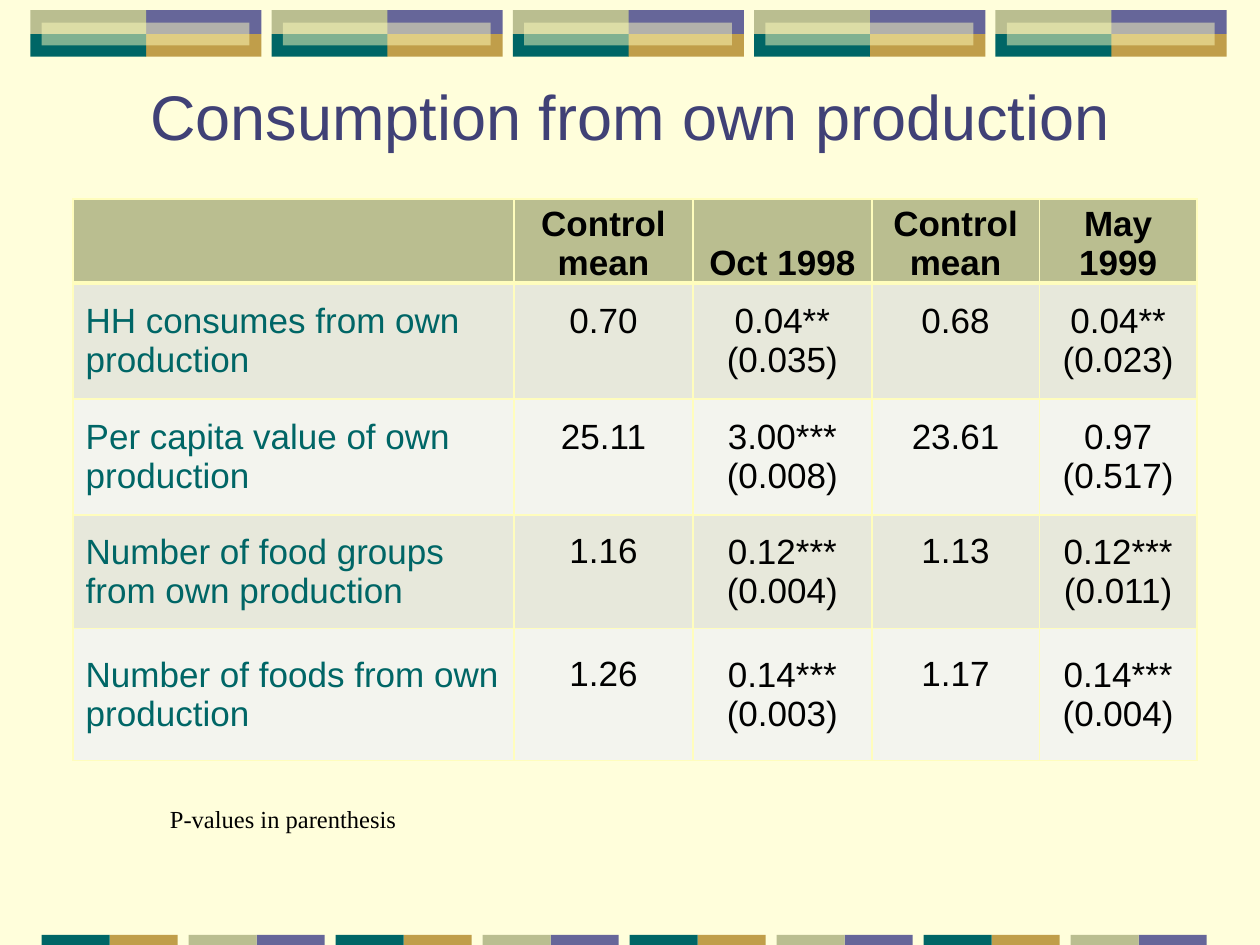
from lxml.etree import SubElement
from pptx import Presentation
from pptx.dml.color import RGBColor
from pptx.enum.shapes import MSO_SHAPE
from pptx.enum.text import MSO_ANCHOR, PP_ALIGN
from pptx.oxml.ns import qn
from pptx.util import Inches, Pt

# Content
TITLE = "Consumption from own production"
NOTE = "P-values in parenthesis"
HEADER = ["", "Control mean", "Oct 1998", "Control mean", "May 1999"]
ROWS = [
    ["HH consumes from own production", "0.70", "0.04**\n(0.035)", "0.68", "0.04**\n(0.023)"],
    ["Per capita value of own production", "25.11", "3.00***\n(0.008)", "23.61", "0.97\n(0.517)"],
    ["Number of food groups from own production", "1.16", "0.12***\n(0.004)", "1.13", "0.12***\n(0.011)"],
    ["Number of foods from own production", "1.26", "0.14***\n(0.003)", "1.17", "0.14***\n(0.004)"],
]
COLUMN_WIDTHS = [3.5, 1.42, 1.42, 1.33, 1.25]
ROW_HEIGHTS = [0.65, 0.92, 0.92, 0.9, 1.05]

CREAM, PALE = "FFFEDB", "FFFDBD"
PURPLE, GOLD, TEAL, OLIVE = "666699", "C09E4A", "006666", "BABE90"
BLACK, NAVY = "000000", "404176"
BANDS = ["E7E8DB", "F3F4EE"]
LINE_HEIGHT = 0.32  # one line of 20 pt text


def color(value):
    return RGBColor.from_string(value)


def add_block(group, left, top, width, height, fill, opacity=None):
    block = group.shapes.add_shape(
        MSO_SHAPE.RECTANGLE, Inches(left), Inches(top), Inches(width), Inches(height))
    block.shadow.inherit = False
    block.fill.solid()
    block.fill.fore_color.rgb = color(fill)
    block.line.fill.background()
    if opacity:
        tint = block.fill._xPr.find(".//" + qn("a:srgbClr"))
        SubElement(tint, qn("a:alpha"), val=str(opacity * 1000))


def write(frame, text, size, fill, font="Arial", bold=False, align=PP_ALIGN.LEFT):
    frame.word_wrap = True
    for index, line in enumerate(text.split("\n")):
        para = frame.add_paragraph() if index else frame.paragraphs[0]
        para.alignment = align
        span = para.add_run()
        span.text = line
        span.font.name = font
        span.font.size = Pt(size)
        span.font.bold = bold
        span.font.color.rgb = color(fill)


def add_text(left, top, width, height, text, size, fill, **style):
    box = page.shapes.add_textbox(Inches(left), Inches(top), Inches(width), Inches(height))
    write(box.text_frame, text, size, fill, **style)
    return box


def set_borders(cell, top, bottom):
    properties = cell._tc.get_or_add_tcPr()
    for side, points in [("L", 1), ("R", 1), ("T", top), ("B", bottom)]:
        line = SubElement(properties, qn("a:ln" + side), w=str(Pt(points)))
        SubElement(SubElement(line, qn("a:solidFill")), qn("a:srgbClr"), val=PALE)


deck = Presentation()
deck.slide_width, deck.slide_height = Inches(10), Inches(7.5)
page = deck.slides.add_slide(deck.slide_layouts[6])
page.background.fill.solid()
page.background.fill.fore_color.rgb = color(CREAM)

# Top banners: four quarters under a translucent bar
banners = page.shapes.add_group_shape()
for number in range(5):
    left = 0.24 + number * 7.66 / 4
    middle = left + 0.915
    add_block(banners, middle, 0.08, 0.92, 0.19, PURPLE)
    add_block(banners, middle, 0.27, 0.92, 0.18, GOLD)
    add_block(banners, left, 0.27, 0.92, 0.18, TEAL)
    add_block(banners, left, 0.08, 0.92, 0.19, OLIVE)
    add_block(banners, left + 0.09, 0.18, 1.65, 0.18, PALE, opacity=50)

# Bottom strip: alternating colour pairs
strip = page.shapes.add_group_shape()
for number in range(8):
    left = 0.33 + number * 7 / 6
    first, second = [(TEAL, GOLD), (OLIVE, PURPLE)][number % 2]
    add_block(strip, left + 0.54, 7.42, 0.54, 0.08, second)
    add_block(strip, left, 7.42, 0.54, 0.08, first)

# Title
title = add_text(0.25, 0.5, 9.5, 0.83, TITLE, 36, NAVY, align=PP_ALIGN.CENTER)
title.text_frame.vertical_anchor = MSO_ANCHOR.MIDDLE

# Results table
table = page.shapes.add_table(
    len(ROW_HEIGHTS), len(COLUMN_WIDTHS), Inches(0.58), Inches(1.58),
    Inches(sum(COLUMN_WIDTHS)), Inches(sum(ROW_HEIGHTS))).table
table.first_row = table.horz_banding = False
for column, width in zip(table.columns, COLUMN_WIDTHS):
    column.width = Inches(width)
for row, height in zip(table.rows, ROW_HEIGHTS):
    row.height = Inches(height)

for row, values in enumerate([HEADER] + ROWS):
    is_header = row == 0
    for column, text in enumerate(values):
        cell = table.cell(row, column)
        is_label = column == 0
        set_borders(cell, top=3 if row == 1 else 1, bottom=3 if is_header else 1)
        cell.fill.solid()
        cell.fill.fore_color.rgb = color(OLIVE if is_header else BANDS[(row - 1) % 2])
        cell.vertical_anchor = MSO_ANCHOR.BOTTOM if is_header else MSO_ANCHOR.MIDDLE
        if not is_label:
            cell.margin_left = cell.margin_right = Inches(0.07)
            # Lift single values level with the estimates beside them
            is_single = not is_header and "\n" not in text
            cell.margin_top = 0
            cell.margin_bottom = Inches(LINE_HEIGHT if is_single else 0)
        if text:
            write(cell.text_frame, text, 20,
                  TEAL if is_label else BLACK, bold=is_header,
                  align=PP_ALIGN.LEFT if is_label else PP_ALIGN.CENTER)

# Note
add_text(1.25, 6.33, 2.42, 0.34, NOTE, 14, BLACK, font="Times New Roman")

deck.save("out.pptx")
